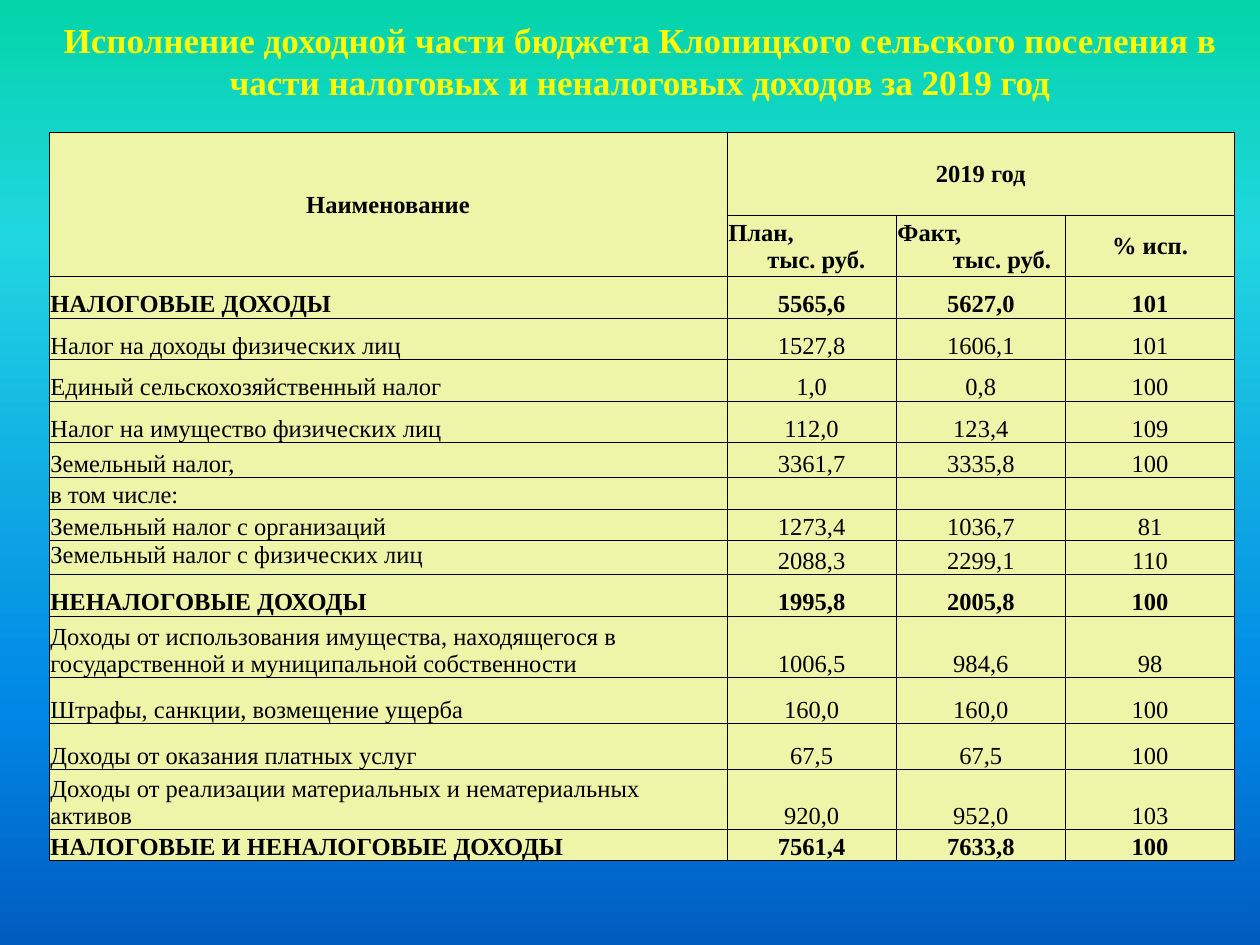
from lxml.etree import SubElement
from pptx import Presentation
from pptx.dml.color import RGBColor
from pptx.enum.text import MSO_ANCHOR as Anchor, PP_ALIGN as Align
from pptx.oxml import parse_xml
from pptx.oxml.ns import nsdecls, qn
from pptx.util import Inches, Pt

COLORS = {
    "title": "FFFF00", "text": "000000", "border": "000000", "cell": "EEF5A9",
    "green": "03D4A8", "cyan": "21D6E0", "sky": "0087E6", "navy": "005CBF",
}
GRID = 0.1  # inches per grid column and per grid row

TITLE = ("Исполнение доходной части бюджета Клопицкого сельского поселения "
         "в части налоговых и неналоговых доходов за 2019 год")
COLUMN_WIDTHS = [53.8, 13.43, 13.43, 13.43]
HEADER_HEIGHTS = [6.6, 4.85]

# Row height, name, plan, actual, percent
INCOME_ROWS = [
    (3.3, "НАЛОГОВЫЕ ДОХОДЫ", "5565,6", "5627,0", "101"),
    (3.3, "Налог на доходы физических лиц", "1527,8", "1606,1", "101"),
    (3.3, "Единый сельскохозяйственный налог", "1,0", "0,8", "100"),
    (3.3, "Налог на имущество физических лиц", "112,0", "123,4", "109"),
    (2.75, "Земельный налог,", "3361,7", "3335,8", "100"),
    (2.5, "в том числе:", "", "", ""),
    (2.5, "Земельный налог с организаций", "1273,4", "1036,7", "81"),
    (2.7, "Земельный налог с физических лиц", "2088,3", "2299,1", "110"),
    (3.3, "НЕНАЛОГОВЫЕ ДОХОДЫ", "1995,8", "2005,8", "100"),
    (4.9, "Доходы от использования имущества, находящегося в государственной "
          "и муниципальной собственности", "1006,5", "984,6", "98"),
    (3.65, "Штрафы, санкции, возмещение ущерба", "160,0", "160,0", "100"),
    (3.65, "Доходы от оказания платных услуг", "67,5", "67,5", "100"),
    (3.65, "Доходы от реализации материальных и нематериальных активов",
     "920,0", "952,0", "103"),
    (2.4, "НАЛОГОВЫЕ И НЕНАЛОГОВЫЕ ДОХОДЫ", "7561,4", "7633,8", "100"),
]
TOP_ALIGNED_NAME = "Земельный налог с физических лиц"


def grid(units):
    return Inches(units * GRID)


class SlideBuilder:
    font = "Times New Roman"
    title_size = 20
    table_size = 14
    border_width = 0.5

    def __init__(self, presentation):
        self.slide = presentation.slides.add_slide(presentation.slide_layouts[6])

    def background(self, stops):
        """Fill the slide with a gradient running from top to bottom."""
        fill = self.slide.background.fill
        fill.gradient()
        gradient = self.slide.background._cSld.find(".//" + qn("a:gradFill"))
        entries = "".join(
            f'<a:gs pos="{percent * 1000}"><a:srgbClr val="{COLORS[name]}"/></a:gs>'
            for percent, name in stops)
        gradient.getparent().replace(gradient, parse_xml(
            f'<a:gradFill {nsdecls("a")} rotWithShape="1"><a:gsLst>{entries}</a:gsLst>'
            '<a:lin ang="5400000" scaled="1"/></a:gradFill>'))

    def run(self, paragraph, text, size, color, bold):
        run = paragraph.add_run()
        run.text = text
        run.font.name = self.font
        run.font.size = Pt(size)
        run.font.bold = bold
        run.font.color.rgb = RGBColor.from_string(COLORS[color])

    def title(self, text, left, top, width, height):
        shape = self.slide.shapes.add_textbox(*map(grid, (left, top, width, height)))
        frame = shape.text_frame
        frame.word_wrap = True
        frame.vertical_anchor = Anchor.BOTTOM
        paragraph = frame.paragraphs[0]
        paragraph.alignment = Align.CENTER
        self.run(paragraph, text, self.title_size, "title", True)

    def table(self, left, top, widths, heights):
        frame = self.slide.shapes.add_table(
            len(heights), len(widths), grid(left), grid(top),
            grid(sum(widths)), grid(sum(heights)))
        table = frame.table
        for column, width in zip(table.columns, widths):
            column.width = grid(width)
        for row, height in zip(table.rows, heights):
            row.height = grid(height)
        for row in table.rows:
            for cell in row.cells:
                self.cell_style(cell)
        return table

    def cell_style(self, cell):
        cell.margin_left = cell.margin_right = cell.margin_top = Inches(0.01)
        cell.margin_bottom = 0
        properties = cell._tc.get_or_add_tcPr()
        for side in ("lnL", "lnR", "lnT", "lnB"):
            line = SubElement(properties, qn(f"a:{side}"), w=str(Pt(self.border_width)))
            fill = SubElement(line, qn("a:solidFill"))
            SubElement(fill, qn("a:srgbClr"), val=COLORS["border"])
        cell.fill.solid()
        cell.fill.fore_color.rgb = RGBColor.from_string(COLORS["cell"])

    def cell(self, cell, text, bold, anchor=Anchor.BOTTOM, align=Align.CENTER):
        cell.vertical_anchor = anchor
        paragraph = cell.text_frame.paragraphs[0]
        paragraph.alignment = align
        if text:
            self.run(paragraph, text, self.table_size, "text", bold)
        else:
            SubElement(paragraph._p, qn("a:endParaRPr"), sz=str(self.table_size * 100))

    def unit_header(self, cell, label, unit, indent):
        """Write a label with its unit indented on the line below."""
        self.cell(cell, label, True, Anchor.MIDDLE, Align.LEFT)
        paragraph = cell.text_frame.add_paragraph()
        paragraph.alignment = Align.LEFT
        properties = paragraph._p.get_or_add_pPr()
        properties.set("marL", str(grid(indent)))
        properties.set("indent", "0")
        self.run(paragraph, unit, self.table_size, "text", True)


def main():
    presentation = Presentation()
    presentation.slide_width, presentation.slide_height = grid(100), grid(75)
    builder = SlideBuilder(presentation)

    # Background and title
    builder.background([(0, "green"), (25, "cyan"), (75, "sky"), (100, "navy")])
    builder.title(TITLE, 3.9, 1.6, 93.8, 7)

    # Table header
    heights = HEADER_HEIGHTS + [row[0] for row in INCOME_ROWS]
    table = builder.table(3.9, 10.5, COLUMN_WIDTHS, heights)
    table.cell(0, 0).merge(table.cell(1, 0))
    table.cell(0, 1).merge(table.cell(0, 3))
    builder.cell(table.cell(0, 0), "Наименование", True, Anchor.MIDDLE)
    builder.cell(table.cell(0, 1), "2019 год", True, Anchor.MIDDLE)
    builder.unit_header(table.cell(1, 1), "План,", "тыс. руб.", 3.1)
    builder.unit_header(table.cell(1, 2), "Факт,", "тыс. руб.", 4.4)
    builder.cell(table.cell(1, 3), "% исп.", True, Anchor.MIDDLE)

    # Income rows: totals are in capitals and bold
    for index, (_, name, *values) in enumerate(INCOME_ROWS, len(HEADER_HEIGHTS)):
        bold = name.isupper()
        anchor = Anchor.TOP if name == TOP_ALIGNED_NAME else Anchor.BOTTOM
        builder.cell(table.cell(index, 0), name, bold, anchor, Align.LEFT)
        for column, value in enumerate(values, 1):
            builder.cell(table.cell(index, column), value, bold)

    presentation.save("out.pptx")


if __name__ == "__main__":
    main()
